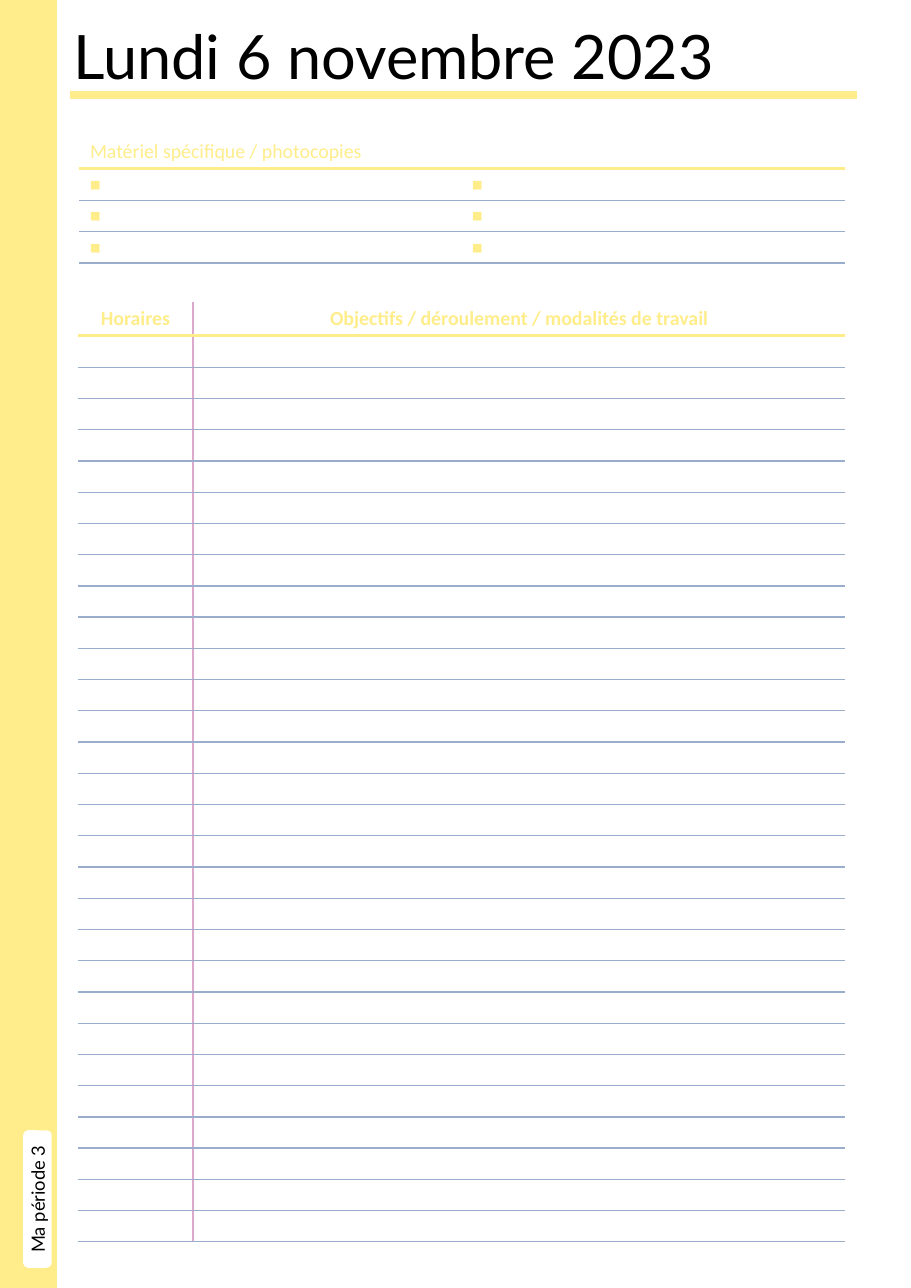
from dataclasses import dataclass

from pptx import Presentation
from pptx.dml.color import RGBColor
from pptx.enum.shapes import MSO_CONNECTOR, MSO_SHAPE
from pptx.enum.text import MSO_ANCHOR as Anchor, PP_ALIGN as Align
from pptx.oxml.ns import qn
from pptx.util import Emu, Pt
from lxml.etree import SubElement

EMU_PER_PX = 8298


@dataclass(frozen=True)
class Theme:
    yellow: str = "FEED8A"
    blue: str = "9AADCD"
    pink: str = "DCA9CC"
    white: str = "FFFFFF"
    black: str = "000000"
    display: str = "Lato"
    body: str = "Calibri"
    title_size: int = 40
    heading_size: int = 13
    tab_size: int = 12
    bullet_size: int = 11
    title_rule: float = 4.75
    heading_rule: float = 2.25
    thin_rule: float = 1


THEME = Theme()


@dataclass(frozen=True)
class Box:
    left: int
    top: int
    width: int
    height: int

    def emu(self) -> tuple:
        return tuple(px(v) for v in (self.left, self.top, self.width, self.height))


@dataclass(frozen=True)
class Block:
    fill: str
    box: Box
    kind: MSO_SHAPE


@dataclass(frozen=True)
class RuledTable:
    left: int
    top: int
    columns: tuple
    heading_height: int
    body_height: int
    headings: tuple
    rows: int
    bullet: str = ""
    bold: bool = False
    align: Align = Align.LEFT
    divider: str = ""


def px(value: int) -> Emu:
    return Emu(value * EMU_PER_PX)


def rgb(value: str) -> RGBColor:
    return RGBColor.from_string(value)


def write(frame, text: str, *, size: int, color: str, font: str = THEME.body,
          bold: bool = False, align: Align = Align.LEFT) -> None:
    paragraph = frame.paragraphs[0]
    paragraph.alignment = align
    if not text:
        SubElement(paragraph._p, qn("a:endParaRPr"), sz=str(size * 100))
        return
    run = paragraph.add_run()
    run.text = text
    run.font.size = Pt(size)
    run.font.name = font
    run.font.bold = bold
    run.font.color.rgb = rgb(color)


def draw_block(slide, block: Block):
    shape = slide.shapes.add_shape(block.kind, *block.box.emu())
    shape.shadow.inherit = False
    shape.fill.solid()
    shape.fill.fore_color.rgb = rgb(block.fill)
    shape.line.color.rgb = rgb(block.fill)
    shape.line.width = Pt(THEME.thin_rule)
    return shape


def set_borders(cell, sides: dict) -> None:
    properties = cell._tc.get_or_add_tcPr()
    for index, side in enumerate("LRTB"):
        color, width = sides.get(side, ("", 0))
        line = SubElement(properties, qn(f"a:ln{side}"), w=str(int(Pt(width))))
        if color:
            fill = SubElement(line, qn("a:solidFill"))
            SubElement(fill, qn("a:srgbClr"), val=color)
        else:
            SubElement(line, qn("a:noFill"))
        properties.insert(index, line)


def draw_table(slide, spec: RuledTable) -> None:
    box = Box(spec.left, spec.top, sum(spec.columns), spec.heading_height + spec.body_height)
    table = slide.shapes.add_table(spec.rows + 1, len(spec.columns), *box.emu()).table
    table.first_row = table.horz_banding = False
    for column, width in zip(table.columns, spec.columns):
        column.width = px(width)
    heading_line = (THEME.yellow, THEME.heading_rule)
    row_line = (THEME.blue, THEME.thin_rule)
    for r, row in enumerate(table.rows):
        row.height = px(spec.body_height) // spec.rows if r else px(spec.heading_height)
        for c, cell in enumerate(row.cells):
            cell.fill.solid()
            cell.fill.fore_color.rgb = rgb(THEME.white)
            cell.vertical_anchor = Anchor.MIDDLE
            cell.margin_top = cell.margin_bottom = 0
            sides = {"B": row_line if r else heading_line}
            if r:
                sides["T"] = heading_line if r == 1 else row_line
            if spec.divider:
                sides["L" if c else "R"] = (spec.divider, THEME.thin_rule)
            set_borders(cell, sides)
            write(cell.text_frame, spec.bullet if r else spec.headings[c],
                  size=THEME.bullet_size if r else THEME.heading_size,
                  color=THEME.yellow, bold=spec.bold, align=spec.align)


def draw_title(slide, text: str) -> None:
    title = slide.shapes.add_textbox(*Box(63, 13, 807, 85).emu())
    title.text_frame.word_wrap = True
    write(title.text_frame, text, size=THEME.title_size, color=THEME.black, font=THEME.display)
    underline = slide.shapes.add_connector(
        MSO_CONNECTOR.STRAIGHT, px(70), px(95), px(857), px(95))
    underline.line.color.rgb = rgb(THEME.yellow)
    underline.line.width = Pt(THEME.title_rule)
    SubElement(underline._element.spPr, qn("a:effectLst"))


def draw_period_tab(slide, text: str) -> None:
    tab = draw_block(slide, Block(THEME.white, Box(24, 1131, 27, 136), MSO_SHAPE.ROUNDED_RECTANGLE))
    frame = tab.text_frame
    frame.margin_left = frame.margin_right = frame.margin_top = frame.margin_bottom = 0
    frame.vertical_anchor = Anchor.MIDDLE
    frame._txBody.bodyPr.set("vert", "vert270")
    write(frame, text, size=THEME.tab_size, color=THEME.black,
          font=THEME.display, align=Align.CENTER)


MATERIALS = RuledTable(
    left=79, top=134, columns=(382, 384), heading_height=35, body_height=94,
    headings=("Matériel spécifique / photocopies", ""), rows=3, bullet="◼︎")
SCHEDULE = RuledTable(
    left=78, top=302, columns=(115, 652), heading_height=34, body_height=907,
    headings=("Horaires", "Objectifs / déroulement / modalités de travail"), rows=29,
    bold=True, align=Align.CENTER, divider=THEME.pink)


def main() -> None:
    deck = Presentation()
    deck.slide_width, deck.slide_height = px(911), px(1288)
    slide = deck.slides.add_slide(deck.slide_layouts[6])
    draw_title(slide, "Lundi 6 novembre 2023")
    for table in (MATERIALS, SCHEDULE):
        draw_table(slide, table)
    draw_block(slide, Block(THEME.yellow, Box(0, 0, 56, 1288), MSO_SHAPE.RECTANGLE))
    draw_period_tab(slide, "Ma période 3")
    deck.save("out.pptx")


if __name__ == "__main__":
    main()
